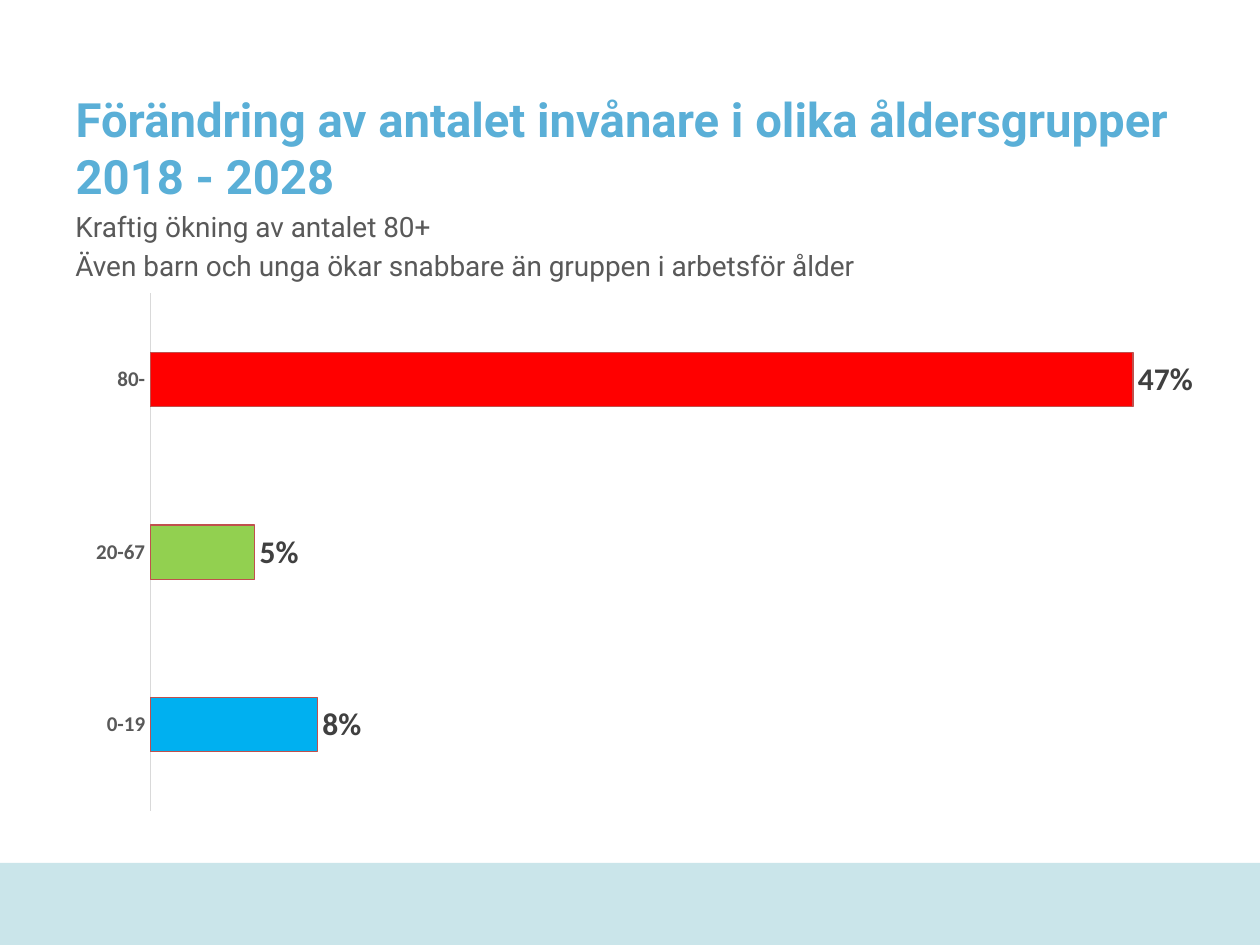
from lxml.etree import SubElement
from pptx import Presentation
from pptx.chart.data import CategoryChartData
from pptx.dml.color import RGBColor
from pptx.enum.chart import XL_CHART_TYPE as ChartType, XL_LABEL_POSITION as LabelPos, XL_TICK_MARK as Tick
from pptx.enum.shapes import MSO_SHAPE as Shape
from pptx.enum.text import MSO_ANCHOR as Anchor, PP_ALIGN as Align
from pptx.oxml.ns import qn
from pptx.util import Inches, Pt

WIDTH, HEIGHT = Inches(10), Inches(7.5)
TITLE_BLUE = RGBColor(0x5A, 0xAF, 0xD7)
TEXT_GREY = RGBColor(0x59, 0x59, 0x59)
LABEL_GREY = RGBColor(0x40, 0x40, 0x40)
AXIS_GREY = RGBColor(0xD9, 0xD9, 0xD9)
BAND_BLUE = RGBColor(0xCA, 0xE5, 0xEA)
BAR_EDGE = RGBColor(0xC0, 0x50, 0x4D)
CHILD_BLUE = RGBColor(0x00, 0xB0, 0xF0)
WORKING_GREEN = RGBColor(0x92, 0xD0, 0x50)
ELDERLY_RED = RGBColor(0xFF, 0x00, 0x00)

AGE_GROUPS = [
    ("0-19", 0.08, CHILD_BLUE),
    ("20-67", 0.05, WORKING_GREEN),
    ("80-", 0.47, ELDERLY_RED),
]


class SlideBuilder:
    """Adds styled elements to one slide; boxes are shares of the slide's size."""

    text_font, chart_font = "Roboto", "Calibri"

    def __init__(self, slide):
        self.s = slide

    def box(self, x, y, w, h):
        return int(x * WIDTH), int(y * HEIGHT), int(w * WIDTH), int(h * HEIGHT)

    def style(self, font, name, size, color, bold=False):
        font.name, font.size, font.bold = name, Pt(size), bold
        font.color.rgb = color

    def title(self, text, *share):
        sp = self.s.shapes.title
        sp.left, sp.top, sp.width, sp.height = self.box(*share)
        tf = sp.text_frame
        tf.text = text
        tf.vertical_anchor = Anchor.MIDDLE
        p = tf.paragraphs[0]
        p.alignment = Align.LEFT
        self.style(p.runs[0].font, self.text_font, 27, TITLE_BLUE, True)

    def body(self, lines, *share):
        tf = self.s.shapes.add_textbox(*self.box(*share)).text_frame
        tf.word_wrap = True
        tf.text = "\n".join(lines)
        for p in tf.paragraphs:
            p.space_before = Pt(3.2)
            self.style(p.runs[0].font, self.text_font, 16, TEXT_GREY)

    def band(self, color, *share):
        sp = self.s.shapes.add_shape(Shape.RECTANGLE, *self.box(*share))
        sp.shadow.inherit = False
        sp.fill.solid()
        sp.fill.fore_color.rgb = color
        sp.line.fill.background()

    def bar_chart(self, groups, plot_area, *share):
        data = CategoryChartData(number_format="0%")
        data.categories = [name for name, _, _ in groups]
        data.add_series("Förändring", [value for _, value, _ in groups])
        chart = self.s.shapes.add_chart(
            ChartType.BAR_CLUSTERED, *self.box(*share), data).chart
        chart.has_legend = chart.has_title = False
        chart.font.name, chart.font.size = self.chart_font, Pt(10)

        axis = chart.category_axis
        axis.major_tick_mark = axis.minor_tick_mark = Tick.NONE
        axis.format.line.color.rgb = AXIS_GREY
        axis.format.line.width = Pt(0.75)
        self.style(axis.tick_labels.font, self.chart_font, 12, TEXT_GREY, True)
        axis = chart.value_axis
        axis.visible = axis.has_major_gridlines = False
        axis.minimum_scale, axis.maximum_scale, axis.major_unit = 0, 0.5, 0.2

        plot = chart.plots[0]
        plot.gap_width, plot.vary_by_categories = 219, False
        plot.has_data_labels = True
        labels = plot.data_labels
        labels.show_value = True
        labels.position = LabelPos.OUTSIDE_END
        labels.number_format, labels.number_format_is_linked = "0%", False
        self.style(labels.font, self.chart_font, 18, LABEL_GREY, True)

        for i, (_, _, color) in enumerate(groups):
            fmt = plot.series[0].points[i].format
            fmt.fill.solid()
            fmt.fill.fore_color.rgb = color
            fmt.line.color.rgb = BAR_EDGE
            fmt.line.width = Pt(0.75)
        self.place_plot(chart, plot_area)

    def place_plot(self, chart, plot_area):
        """Fix the inner plot area, given as shares of the chart's size."""
        area = chart.element.find(".//" + qn("c:plotArea"))
        layout = area.find(qn("c:layout"))
        if layout is None:
            layout = SubElement(area, qn("c:layout"))
            area.insert(0, layout)
        manual = SubElement(layout, qn("c:manualLayout"))
        settings = [("layoutTarget", "inner"), ("xMode", "edge"), ("yMode", "edge")]
        for tag, value in settings + list(zip("xywh", plot_area)):
            SubElement(manual, qn("c:" + tag)).set("val", str(value))


def main():
    prs = Presentation()
    prs.slide_width, prs.slide_height = WIDTH, HEIGHT
    slide = SlideBuilder(prs.slides.add_slide(prs.slide_layouts[5]))
    slide.bar_chart(AGE_GROUPS, (0.094, 0.254, 0.905, 0.693),
                    0.033, 0.11, 0.917, 0.79)
    slide.band(BAND_BLUE, 0, 0.913, 1, 0.087)
    slide.title("Förändring av antalet invånare i olika åldersgrupper 2018 - 2028",
                0.05, 0.072, 0.9, 0.167)
    slide.body(["Kraftig ökning av antalet 80+",
                "Även barn och unga ökar snabbare än gruppen i arbetsför ålder"],
               0.05, 0.215, 0.9, 0.143)
    prs.save("out.pptx")


if __name__ == "__main__":
    main()
